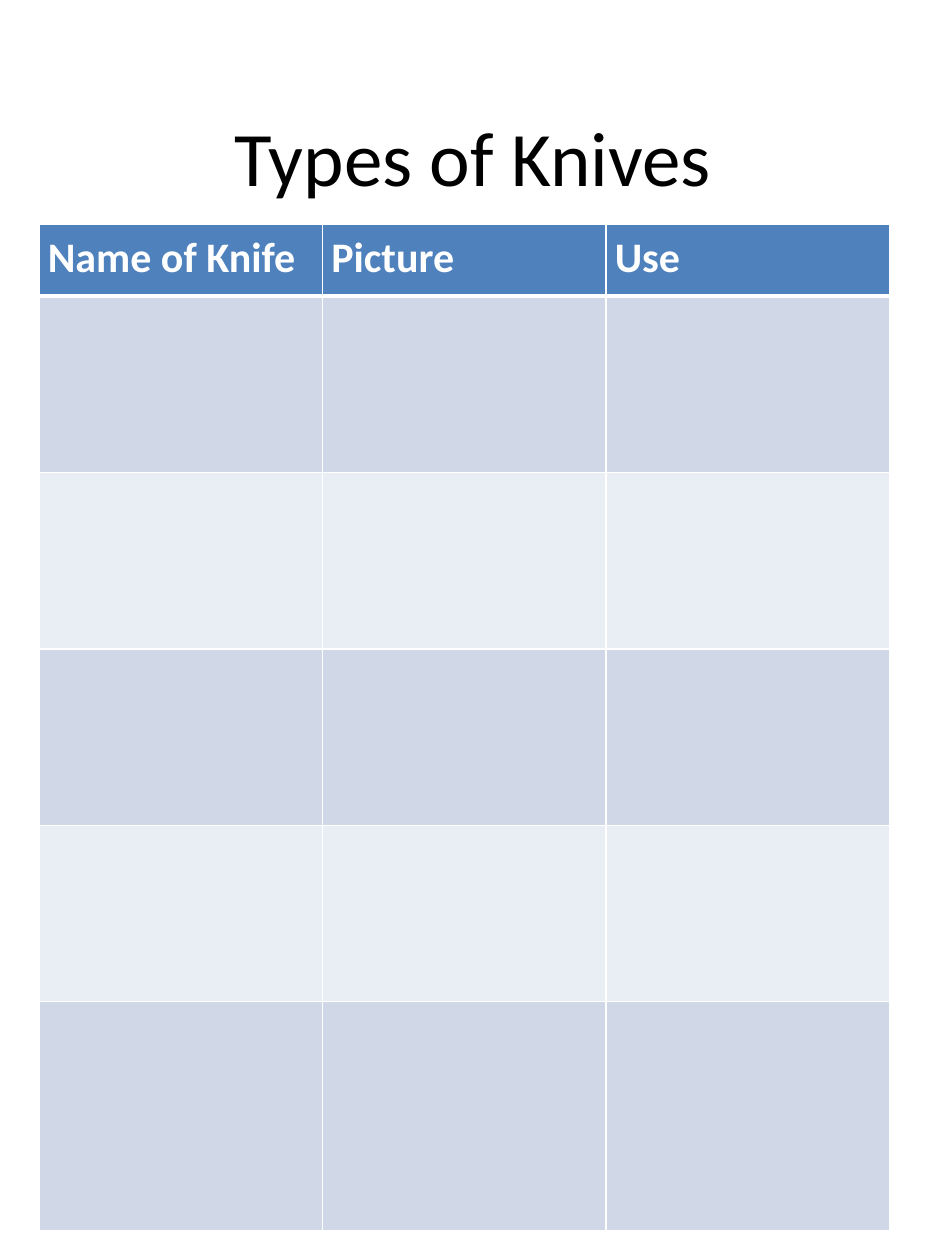
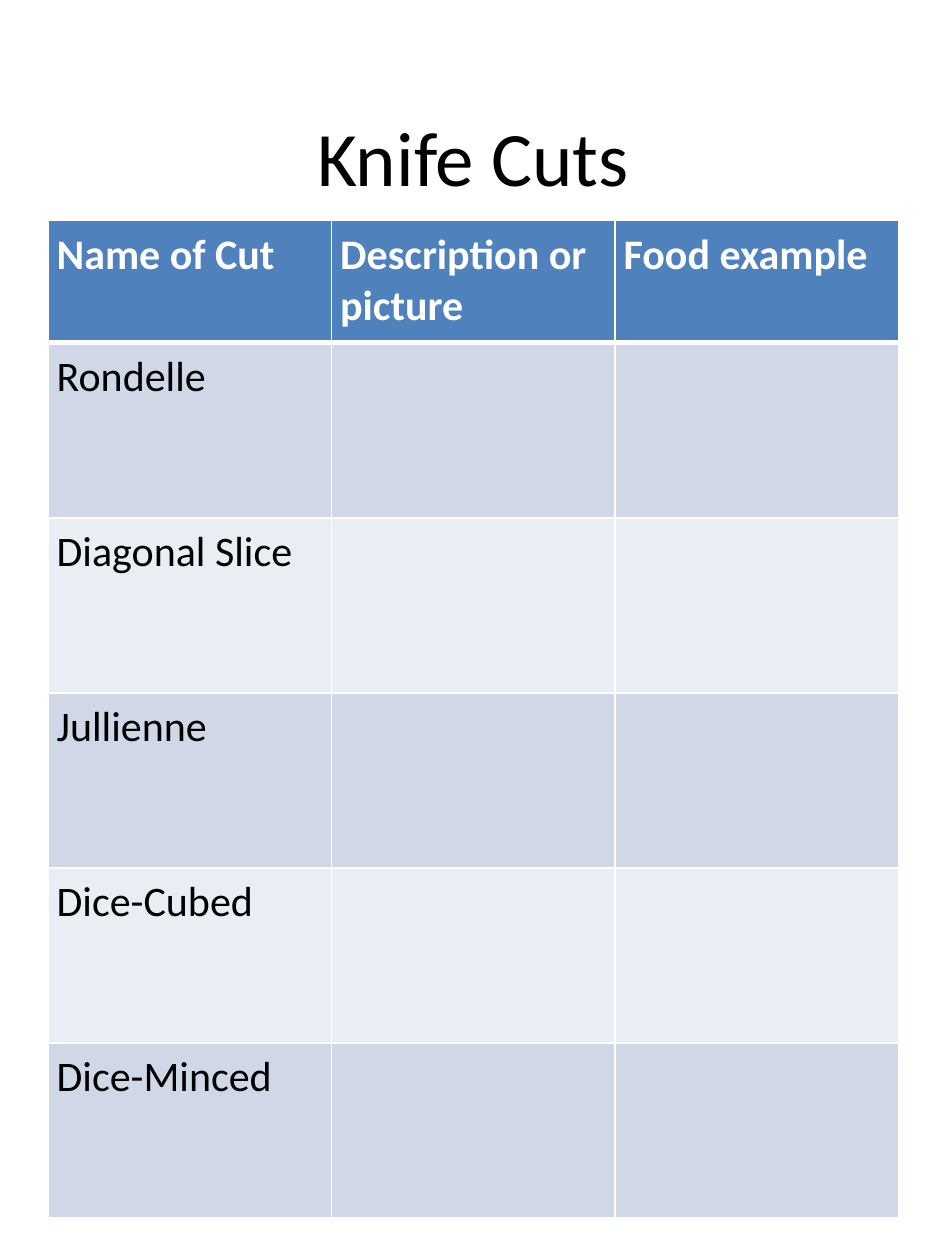
from dataclasses import dataclass

import lxml.etree
import pptx
import pptx.dml.color
import pptx.enum.text
import pptx.oxml.ns
import pptx.util

Inches = pptx.util.Inches


@dataclass(frozen=True)
class Theme:
    font: str = "Calibri"
    title_size: int = 44
    table_size: int = 24
    text: str = "000000"
    white: str = "FFFFFF"
    header: str = "4F81BD"
    bands: tuple = ("D0D8E8", "E9EDF4")
    grid_width: int = 1
    header_rule_width: int = 3
    cell_margin: float = 0.07
    column_width: float = 2.25


THEME = Theme()


def color(value):
    return pptx.dml.color.RGBColor.from_string(value)


def format_runs(text_frame, size, font_color, bold=False):
    for paragraph in text_frame.paragraphs:
        for run in paragraph.runs:
            run.font.name = THEME.font
            run.font.size = pptx.util.Pt(size)
            run.font.bold = bold
            run.font.color.rgb = color(font_color)


def add_title(slide, text):
    title = slide.shapes.add_textbox(Inches(0.38), Inches(0.4), Inches(6.75), Inches(1.67))
    text_frame = title.text_frame
    text_frame.word_wrap = True
    text_frame.vertical_anchor = pptx.enum.text.MSO_ANCHOR.MIDDLE
    text_frame.text = text
    text_frame.paragraphs[0].alignment = pptx.enum.text.PP_ALIGN.CENTER
    format_runs(text_frame, THEME.title_size, THEME.text)


def set_borders(cell, top_width, bottom_width):
    properties = cell._tc.get_or_add_tcPr()
    widths = {"L": THEME.grid_width, "R": THEME.grid_width, "T": top_width, "B": bottom_width}
    qn = pptx.oxml.ns.qn
    for position, (side, width) in enumerate(widths.items()):
        line = lxml.etree.Element(qn(f"a:ln{side}"), w=str(pptx.util.Pt(width)))
        fill = lxml.etree.SubElement(line, qn("a:solidFill"))
        lxml.etree.SubElement(fill, qn("a:srgbClr"), val=THEME.white)
        properties.insert(position, line)


def format_cell(cell, row_index):
    is_header = row_index == 0
    cell.margin_left = cell.margin_right = Inches(THEME.cell_margin)
    cell.margin_top = cell.margin_bottom = Inches(THEME.cell_margin)
    band = THEME.bands[(row_index - 1) % len(THEME.bands)]
    cell.fill.solid()
    cell.fill.fore_color.rgb = color(THEME.header if is_header else band)
    set_borders(
        cell,
        THEME.header_rule_width if row_index == 1 else THEME.grid_width,
        THEME.header_rule_width if is_header else THEME.grid_width,
    )
    format_runs(
        cell.text_frame, THEME.table_size, THEME.white if is_header else THEME.text, is_header
    )


def add_worksheet_table(slide, left, top, headings, names, row_heights):
    frame = slide.shapes.add_table(
        len(row_heights), len(headings), Inches(left), Inches(top),
        Inches(THEME.column_width * len(headings)), Inches(sum(row_heights)),
    )
    table = frame.table
    for column in table.columns:
        column.width = Inches(THEME.column_width)
    for row, height in zip(table.rows, row_heights):
        row.height = Inches(height)
    for column_index, heading in enumerate(headings):
        table.cell(0, column_index).text_frame.text = heading
    for row_index, name in enumerate(names, start=1):
        table.cell(row_index, 0).text_frame.text = name
    for row_index, row in enumerate(table.rows):
        for cell in row.cells:
            format_cell(cell, row_index)


def add_worksheet(presentation, title, **table_options):
    slide = presentation.slides.add_slide(presentation.slide_layouts[6])
    add_title(slide, title)
    add_worksheet_table(slide, **table_options)


def main():
    presentation = pptx.Presentation()
    presentation.slide_width = Inches(7.5)
    presentation.slide_height = Inches(10)
    add_worksheet(
        presentation, "Types of Knives", left=0.31, top=1.78,
        headings=["Name of Knife", "Picture", "Use"], names=[],
        row_heights=[0.57] + [1.4] * 4 + [1.82],
    )
    add_worksheet(
        presentation, "Knife Cuts", left=0.38, top=1.75,
        headings=["Name of Cut", "Description or picture", "Food example"],
        names=["Rondelle", "Diagonal Slice", "Jullienne", "Dice-Cubed", "Dice-Minced"],
        row_heights=[0.97] + [1.39] * 5,
    )
    presentation.save("out.pptx")


if __name__ == "__main__":
    main()
